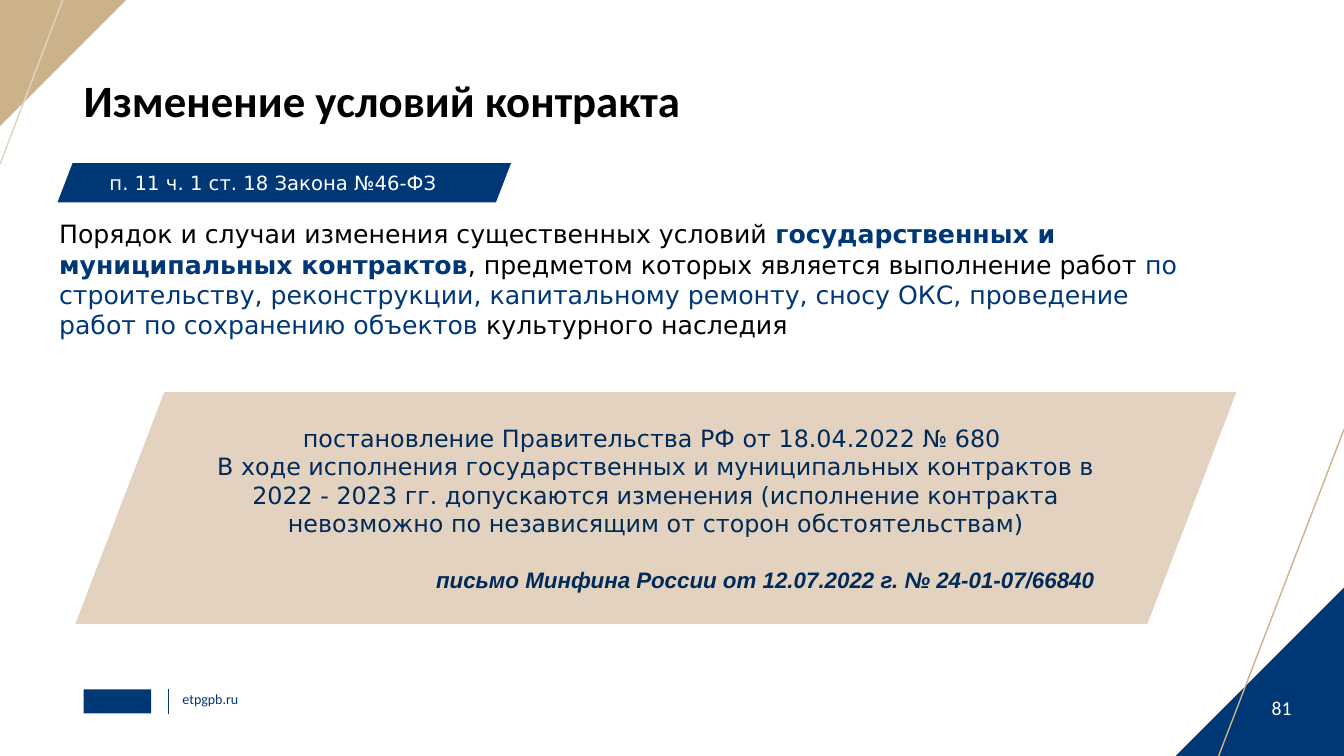
from dataclasses import dataclass

from lxml import etree
from pptx import Presentation
from pptx import util as u
from pptx.dml.color import RGBColor
from pptx.enum import shapes, text
from pptx.oxml.ns import qn


@dataclass(frozen=True)
class Theme:
    navy: str = "003876"
    deep_navy: str = "002A58"
    gold: str = "CCB289"
    sand: str = "E3D2C0"
    black: str = "000000"
    white: str = "FFFFFF"
    heading_font: str = "Calibri"
    body_font: str = "DejaVu Sans"
    letter_font: str = "Arial"
    title_size: float = 32
    body_size: float = 18
    panel_size: float = 17
    letter_size: float = 16
    tag_size: float = 14
    link_size: float = 10


THEME = Theme()
SHAPE = shapes.MSO_SHAPE
ALIGN = text.PP_ALIGN
ANCHOR = text.MSO_ANCHOR
SHAPE_INSETS = (0.2, 0.1)
BOX_INSETS = (0.25, 0.13)


def lengths(values):
    return [u.Cm(value) for value in values]


def set_font(font, name, size, color, bold=False, italic=False):
    font.name = name
    font.size = u.Pt(size)
    font.bold = bold
    font.italic = italic
    font.color.rgb = RGBColor.from_string(color)


def set_frame(frame, insets, anchor):
    frame.word_wrap = True
    frame.vertical_anchor = anchor
    frame.margin_left = frame.margin_right = u.Cm(insets[0])
    frame.margin_top = frame.margin_bottom = u.Cm(insets[1])


def write(para, words, name, size, color, align=ALIGN.LEFT, **style):
    para.text = words
    para.alignment = align
    set_font(para.font, name, size, color, **style)


def add_box(page, place, insets=(0, 0), anchor=ANCHOR.TOP):
    box = page.shapes.add_textbox(*lengths(place))
    set_frame(box.text_frame, insets, anchor)
    return box.text_frame


def add_filled(page, kind, place, color, slant=None, turn=0):
    shape = page.shapes.add_shape(kind, *lengths(place))
    shape.shadow.inherit = False
    shape.fill.solid()
    shape.fill.fore_color.rgb = RGBColor.from_string(color)
    shape.line.fill.background()
    shape.rotation = turn
    if slant is not None:
        shape.adjustments[0] = slant
    set_frame(shape.text_frame, SHAPE_INSETS, ANCHOR.MIDDLE)
    return shape.text_frame


def add_line(page, ends, color, width):
    line = page.shapes.add_connector(shapes.MSO_CONNECTOR.STRAIGHT, *lengths(ends))
    line.line.color.rgb = RGBColor.from_string(color)
    line.line.width = u.Pt(width)
    etree.SubElement(line._element.spPr, qn("a:effectLst"))


def add_corners(page):
    add_filled(page, SHAPE.ISOSCELES_TRIANGLE, (29.63, 14.81, 4.24, 4.24), THEME.navy, 1)
    add_line(page, (33.87, 10.82, 30.71, 19.05), THEME.gold, 1)
    add_filled(page, SHAPE.ISOSCELES_TRIANGLE, (0, 0, 3.18, 3.18), THEME.gold, 1, 180)
    add_line(page, (1.58, 0, 0, 4.14), THEME.sand, 1)


def add_footer(page):
    number = add_box(page, (31.27, 17.22, 2.06, 0.91), anchor=ANCHOR.BOTTOM)
    write(number.paragraphs[0], "81", THEME.heading_font, THEME.tag_size,
          THEME.white, ALIGN.CENTER)
    add_filled(page, SHAPE.RECTANGLE, (2.11, 17.37, 1.7, 0.61), THEME.navy)
    add_line(page, (4.24, 17.37, 4.24, 17.98), THEME.navy, 0.5)
    link = add_box(page, (4.6, 17.4, 2.79, 0.43))
    write(link.paragraphs[0], "etpgpb.ru", THEME.heading_font, THEME.link_size, THEME.navy)


def add_title(page):
    para = add_box(page, (2.11, 1.98, 29.62, 1.22)).paragraphs[0]
    write(para, "Изменение условий контракта", THEME.heading_font, THEME.title_size,
          THEME.black, bold=True)
    para.line_spacing = 0.9


def add_summary(page):
    para = add_box(page, (1.24, 5.38, 29.62, 3.34), BOX_INSETS).paragraphs[0]
    spans = (
        ("Порядок и случаи изменения существенных условий ", THEME.black, False),
        ("государственных и муниципальных контрактов", THEME.navy, True),
        (", предметом которых является выполнение работ ", THEME.black, False),
        ("по строительству, реконструкции, капитальному ремонту, сносу ОКС, "
         "проведение работ по сохранению объектов ", THEME.navy, False),
        ("культурного наследия", THEME.black, False),
    )
    for words, color, bold in spans:
        span = para.add_run()
        span.text = words
        set_font(span.font, THEME.body_font, THEME.body_size, color, bold)


def add_tag(page):
    frame = add_filled(page, SHAPE.PARALLELOGRAM, (1.45, 4.11, 11.43, 0.99),
                       THEME.navy, 0.384)
    write(frame.paragraphs[0], "п. 11 ч. 1 ст. 18 Закона №46-ФЗ", THEME.body_font,
          THEME.tag_size, THEME.white)


def add_panel(page):
    frame = add_filled(page, SHAPE.PARALLELOGRAM, (1.9, 9.88, 29.26, 5.84),
                       THEME.sand, 0.384)
    write(frame.paragraphs[0], "постановление Правительства РФ от 18.04.2022 № 680 ",
          THEME.body_font, THEME.panel_size, THEME.deep_navy, ALIGN.CENTER)
    write(frame.add_paragraph(),
          "В ходе исполнения государственных и муниципальных контрактов в "
          "2022 - 2023 гг. допускаются изменения (исполнение контракта "
          "невозможно по независящим от сторон обстоятельствам)",
          THEME.body_font, THEME.panel_size, THEME.deep_navy, ALIGN.CENTER)
    letter = frame.add_paragraph()
    write(letter, "письмо Минфина России от 12.07.2022 г. № 24-01-07/66840",
          THEME.letter_font, THEME.letter_size, THEME.deep_navy, ALIGN.RIGHT,
          bold=True, italic=True)
    letter.space_before = u.Pt(20)


def main():
    deck = Presentation()
    deck.slide_width = u.Cm(33.87)
    deck.slide_height = u.Cm(19.05)
    page = deck.slides.add_slide(deck.slide_layouts[6])
    add_corners(page)
    add_footer(page)
    add_title(page)
    add_summary(page)
    add_tag(page)
    add_panel(page)
    deck.save("out.pptx")


if __name__ == "__main__":
    main()
